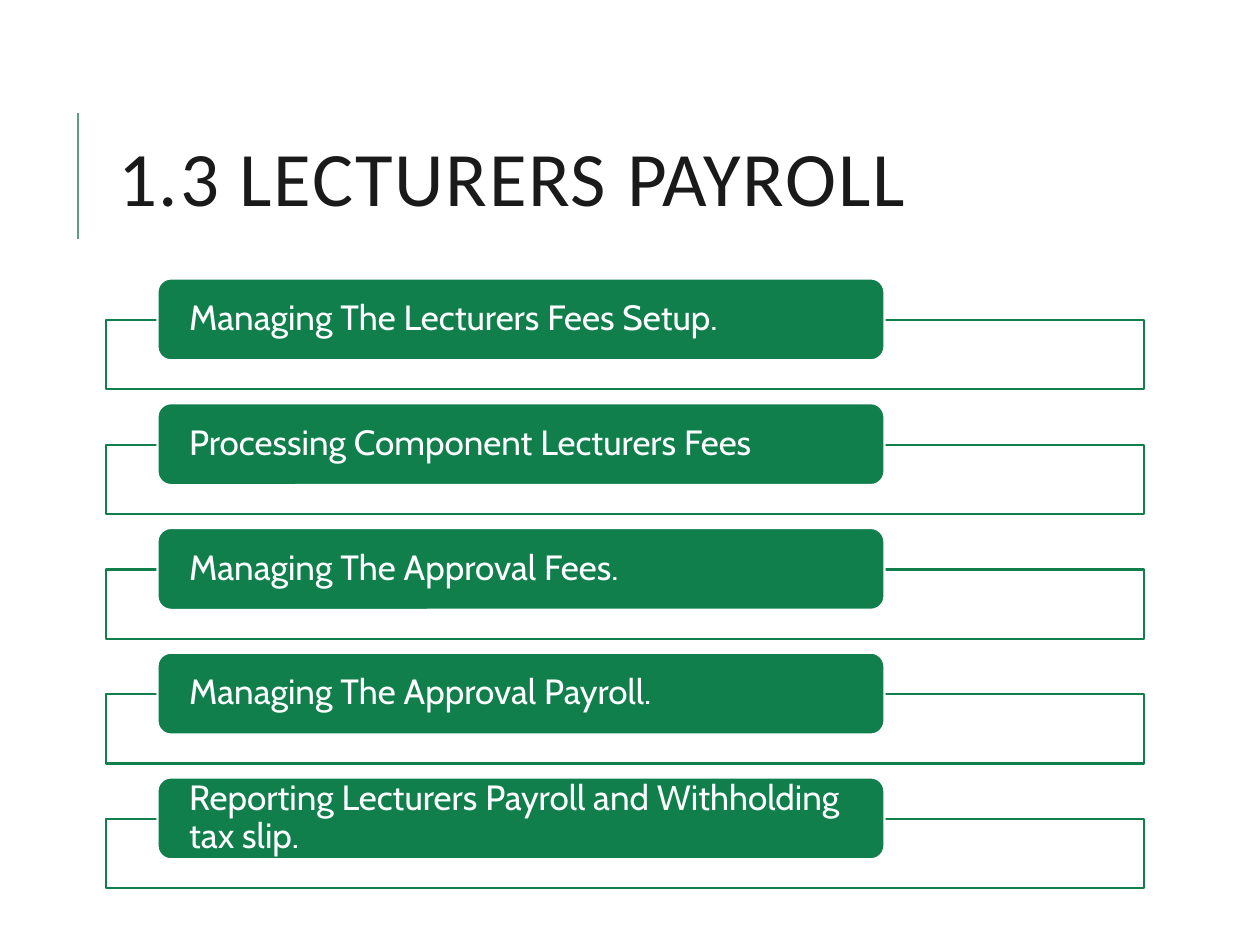
from dataclasses import dataclass

from lxml import etree
from pptx import Presentation
from pptx.dml.color import RGBColor
from pptx.enum.shapes import MSO_CONNECTOR, MSO_SHAPE
from pptx.enum.text import MSO_ANCHOR, PP_ALIGN
from pptx.oxml.ns import qn
from pptx.util import Inches, Pt

RECT = MSO_SHAPE.RECTANGLE
ROUND_RECT = MSO_SHAPE.ROUNDED_RECTANGLE
STRAIGHT = MSO_CONNECTOR.STRAIGHT
MIDDLE = MSO_ANCHOR.MIDDLE
LEFT = PP_ALIGN.LEFT

GREEN, PALE_GREEN, WHITE, INK = "107F4C", "5F9C80", "FFFFFF", "1A1A1A"
FIRST_TOP, PITCH = 2.21, 0.99
FRAME_DROP = 0.33


@dataclass
class Box:
    left: float
    top: float
    width: float
    height: float

    def emu(self) -> tuple:
        return tuple(Inches(v) for v in (self.left, self.top, self.width, self.height))


def rgb(hex_color: str) -> RGBColor:
    return RGBColor.from_string(hex_color)


def add_box(s, kind, box: Box, fill: str, line: str):
    sp = s.shapes.add_shape(kind, *box.emu())
    sp.shadow.inherit = False
    sp.fill.solid()
    sp.fill.fore_color.rgb = rgb(fill)
    sp.line.color.rgb = rgb(line)
    sp.line.width = Pt(1.25)
    return sp


def set_alpha(sp, percent: int) -> None:
    color = sp._element.spPr.find(qn("a:solidFill")).find(qn("a:srgbClr"))
    etree.SubElement(color, qn("a:alpha"), val=str(percent * 1000))


def set_text(sp, text: str, font: str, size: float, color: str, spacing: float):
    tf = sp.text_frame
    tf.word_wrap = True
    tf.vertical_anchor = MIDDLE
    p = tf.paragraphs[0]
    p.text = text
    p.alignment = LEFT
    p.line_spacing = spacing
    p.font.name = font
    p.font.size = Pt(size)
    p.font.color.rgb = rgb(color)
    return tf


def add_title(s, text: str) -> None:
    # Accent line beside the title
    line = s.shapes.add_connector(STRAIGHT, Inches(0.62), Inches(1.9), Inches(0.62), Inches(0.9))
    line.line.color.rgb = rgb(PALE_GREEN)
    line.line.width = Pt(1.5)
    etree.SubElement(line._element.spPr, qn("a:effectLst"))

    # Title with letters spaced by one point
    sp = s.shapes.add_textbox(*Box(0.84, 0.64, 7.97, 1.64).emu())
    tf = set_text(sp, text, "Calibri", 44, INK, 0.8)
    tf.paragraphs[0].runs[0].font._element.set("spc", "100")


def add_step(s, text: str, top: float) -> None:
    # Outlined frame behind the label
    frame = add_box(s, RECT, Box(0.84, top + FRAME_DROP, 8.24, 0.55), WHITE, GREEN)
    set_alpha(frame, 90)

    # Rounded label
    label = add_box(s, ROUND_RECT, Box(1.25, top, 5.77, 0.65), GREEN, WHITE)
    tf = set_text(label, text, "Cabin", 20, WHITE, 0.9)
    tf.margin_left = tf.margin_right = Inches(0.22)
    tf.margin_top = tf.margin_bottom = 0


def main() -> None:
    prs = Presentation()
    prs.slide_width, prs.slide_height = Inches(10), Inches(7.5)
    s = prs.slides.add_slide(prs.slide_layouts[6])

    add_title(s, "1.3 LECTURERS PAYROLL")
    steps = [
        "Managing The Lecturers Fees Setup.",
        "Processing Component Lecturers Fees",
        "Managing The Approval Fees.",
        "Managing The Approval Payroll.",
        "Reporting Lecturers Payroll and Withholding tax slip.",
    ]
    for i, step in enumerate(steps):
        add_step(s, step, FIRST_TOP + i * PITCH)

    prs.save("out.pptx")


if __name__ == "__main__":
    main()
